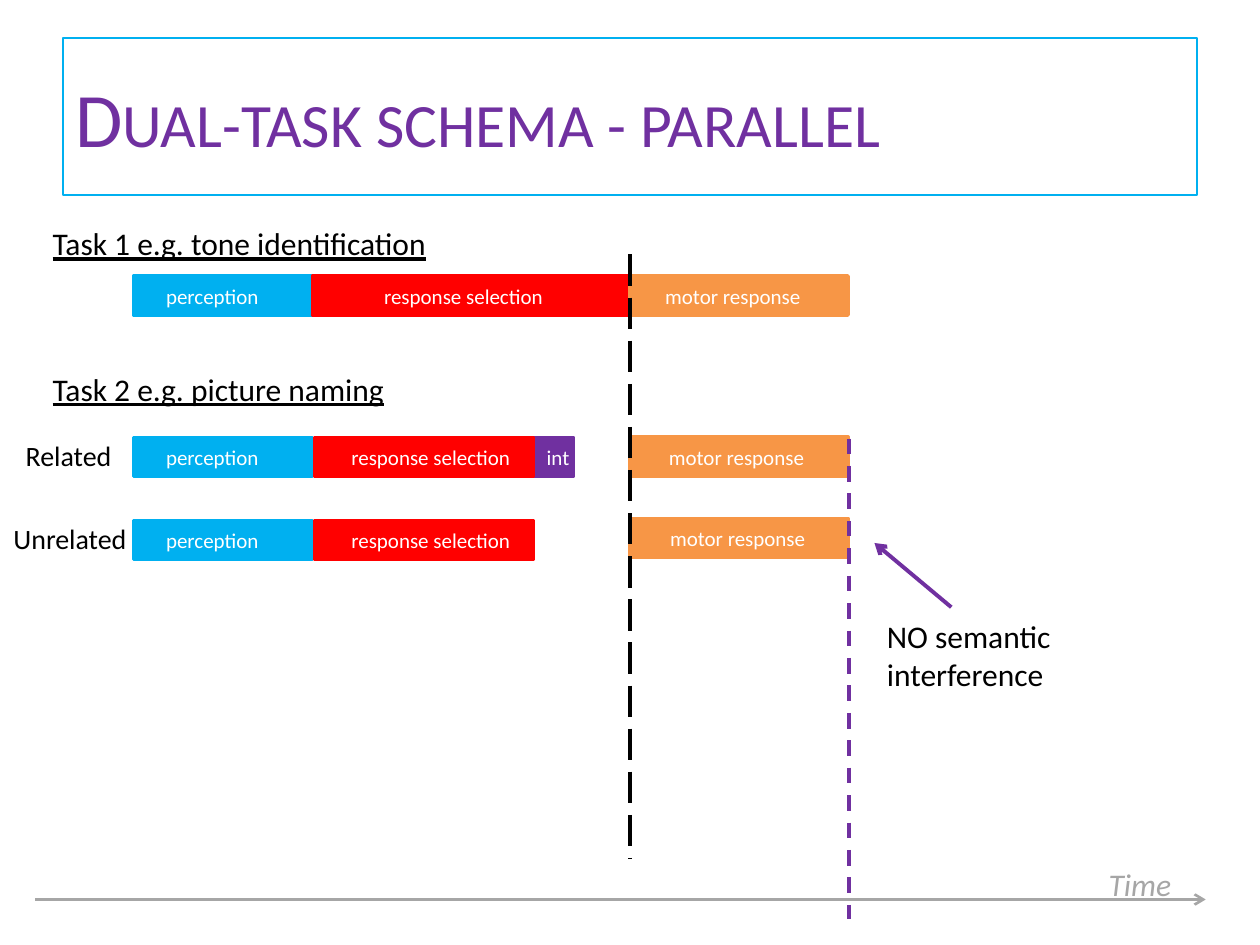
from dataclasses import dataclass
from typing import Optional

from lxml import etree
from pptx import Presentation
from pptx.dml.color import RGBColor
from pptx.enum import dml, shapes, text
from pptx.oxml import ns
from pptx.util import Pt


@dataclass(frozen=True)
class Theme:
    font: str = "Calibri"
    blue: str = "00B0F0"
    red: str = "FF0000"
    orange: str = "F79646"
    purple: str = "7030A0"
    grey: str = "A6A6A6"
    black: str = "000000"
    white: str = "FFFFFF"
    title_size: float = 44
    body_size: float = 18
    condition_size: float = 16
    stage_size: float = 12


@dataclass(frozen=True)
class Stage:
    """One processing stage: a bar and the label on it, placed within a row."""
    name: str
    color: str
    left: float
    width: float
    label_left: float
    label_width: float
    shift: float = 0


@dataclass(frozen=True)
class Row:
    top: float
    stages: tuple[Stage, ...]


@dataclass(frozen=True)
class Caption:
    words: str
    left: float
    top: float
    width: float
    height: float
    size: float
    color: str = Theme.black
    underline: bool = False
    italic: bool = False
    centered: bool = False


@dataclass(frozen=True)
class Rule:
    start: tuple[float, float]
    end: tuple[float, float]
    color: str
    weight: float = 2.25
    dash: Optional[dml.MSO_LINE] = None
    arrow: bool = False


THEME = Theme()
BAR_HEIGHT = 22.3
LABEL_HEIGHT = 21.6
RESPONSE_START = 360


def rgb(color: str) -> RGBColor:
    return RGBColor.from_string(color)


def add_caption(slide, caption: Caption):
    box = slide.shapes.add_textbox(Pt(caption.left), Pt(caption.top),
                                   Pt(caption.width), Pt(caption.height))
    frame = box.text_frame
    frame.word_wrap = not caption.centered
    line = frame.paragraphs[0]
    line.text = caption.words
    if caption.centered:
        line.alignment = text.PP_ALIGN.CENTER
    font = line.font
    font.name, font.size = THEME.font, Pt(caption.size)
    font.color.rgb = rgb(caption.color)
    font.underline = caption.underline or None
    font.italic = caption.italic or None
    return box


def add_title(slide, words: str) -> None:
    title = add_caption(slide, Caption(words, 36, 21.6, 648, 90,
                                       THEME.title_size, THEME.purple))
    title.line.color.rgb = rgb(THEME.blue)
    title.line.width = Pt(1)
    title.text_frame.vertical_anchor = text.MSO_ANCHOR.MIDDLE
    run = title.text_frame.paragraphs[0].runs[0]
    run.font._element.set("cap", "small")


def add_row(slide, row: Row) -> None:
    for stage in row.stages:
        top = row.top + stage.shift
        bar = slide.shapes.add_shape(shapes.MSO_SHAPE.RECTANGLE, Pt(stage.left), Pt(top),
                                     Pt(stage.width), Pt(BAR_HEIGHT))
        bar.shadow.inherit = False
        bar.fill.solid()
        bar.fill.fore_color.rgb = bar.line.color.rgb = rgb(stage.color)
        bar.line.width = Pt(2)
        add_caption(slide, Caption(stage.name, stage.label_left, top + 0.7, stage.label_width,
                                   LABEL_HEIGHT, THEME.stage_size, THEME.white))


def add_rule(slide, rule: Rule) -> None:
    connector = slide.shapes.add_connector(shapes.MSO_CONNECTOR.STRAIGHT,
                                           *map(Pt, rule.start + rule.end))
    connector.line.color.rgb = rgb(rule.color)
    connector.line.width = Pt(rule.weight)
    if rule.dash is not None:
        connector.line.dash_style = rule.dash
    if rule.arrow:
        etree.SubElement(connector.line._get_or_add_ln(), ns.qn("a:tailEnd"), type="arrow")
    etree.SubElement(connector._element.spPr, ns.qn("a:effectLst"))


def perception() -> Stage:
    return Stage("perception", THEME.blue, 76.3, 102.2, 87.8, 102.2)


def selection(left: float = 180, width: float = 124.6,
              label_left: float = 193.7, label_width: float = 110.9) -> Stage:
    return Stage("response selection", THEME.red, left, width, label_left, label_width)


def motor(label_left: float, shift: float = 0) -> Stage:
    return Stage("motor response", THEME.orange, RESPONSE_START, 124.6,
                 label_left, 102.2, shift)


INTERFERENCE = Stage("int", THEME.purple, 305.3, BAR_HEIGHT, 305.3, 32.4)

ROWS = (
    Row(157.7, (perception(), selection(178.6, 181.4, 212.4, 131.8), motor(373))),
    Row(250, (perception(), INTERFERENCE, selection(), motor(375.1, -0.4))),
    Row(297.4, (perception(), selection(), motor(375.8, -1.2))),
)

CAPTIONS = (
    Caption("Task 1 e.g. tone identification", 23, 124.6, 271.4, 28.8,
            THEME.body_size, underline=True),
    Caption("Task 2 e.g. picture naming", 23, 207.7, 271.4, 28.8,
            THEME.body_size, underline=True),
    Caption("Related", 7.2, 247, 64, 26.6, THEME.condition_size, centered=True),
    Caption("Unrelated", 0, 294.5, 80, 26.6, THEME.condition_size, centered=True),
    Caption("NO semantic interference", 499.7, 349.2, 149.8, 51, THEME.body_size),
    Caption("Time", 626.4, 491, 62.6, 28.8, THEME.body_size, THEME.grey, italic=True),
)

RULES = (
    # Time axis
    Rule((20.2, 514), (689, 514), THEME.grey, 1.5, arrow=True),
    # Start and end of the motor response
    Rule((RESPONSE_START, 145.4), (RESPONSE_START, 491), THEME.black,
         dash=dml.MSO_LINE.LONG_DASH),
    Rule((485.3, 250.6), (485.3, 524.9), THEME.purple, dash=dml.MSO_LINE.DASH),
    # Pointer to the end of the response
    Rule((543.6, 347), (499.7, 310.3), THEME.purple, arrow=True),
)


def main() -> None:
    deck = Presentation()
    deck.slide_width, deck.slide_height = Pt(720), Pt(540)
    slide = deck.slides.add_slide(deck.slide_layouts[6])

    add_title(slide, "Dual-task schema - parallel")
    for row in ROWS:
        add_row(slide, row)
    for caption in CAPTIONS:
        add_caption(slide, caption)
    for rule in RULES:
        add_rule(slide, rule)

    deck.save("out.pptx")


if __name__ == "__main__":
    main()
